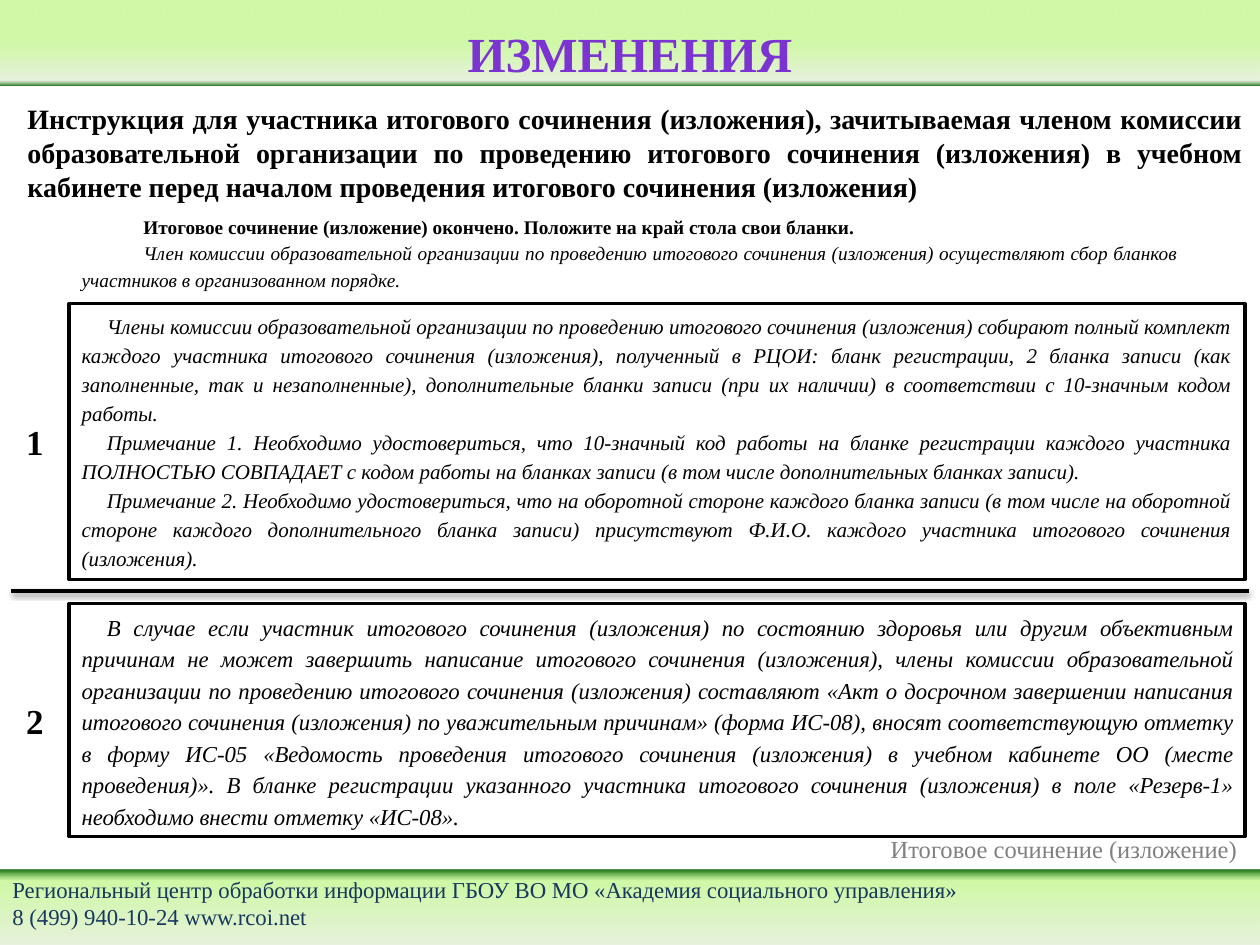
from dataclasses import dataclass
from typing import Optional

from lxml import etree
from pptx import Presentation
from pptx.dml.color import RGBColor
from pptx.enum.shapes import MSO_CONNECTOR as Connector, MSO_SHAPE as Shape
from pptx.enum.text import MSO_ANCHOR as Anchor, PP_ALIGN as Align
from pptx.oxml import parse_xml
from pptx.oxml.ns import nsdecls, qn
from pptx.util import Inches, Pt

FONT = "Times New Roman"
BLACK = RGBColor(0x00, 0x00, 0x00)
WHITE = RGBColor(0xFF, 0xFF, 0xFF)
PURPLE = RGBColor(0x7B, 0x34, 0xD2)
NAVY = RGBColor(0x17, 0x37, 0x5E)
GRAY = RGBColor(0x80, 0x80, 0x80)
PALE = RGBColor(0xDD, 0xEB, 0xCF)
LIME = RGBColor(0xB4, 0xF5, 0x73)
GREEN = RGBColor(0x15, 0x6B, 0x13)


@dataclass
class Stop:
    position: int
    color: RGBColor
    opacity: int = 100


@dataclass
class Band:
    top: float
    height: float
    angle: int
    stops: list[Stop]


@dataclass
class Span:
    text: str
    bold: bool = False
    italic: bool = False


@dataclass
class Panel:
    left: float
    top: float
    width: float
    height: float
    size: int
    paras: list[Span]
    indent: float = 0
    spacing: Optional[float] = None
    border: bool = False


@dataclass
class Label:
    left: float
    top: float
    width: float
    height: float
    text: str
    size: int
    color: RGBColor
    bold: bool = False


BANDS = [
    Band(6.9, 0.6, 270, [Stop(0, PALE, 68), Stop(85, LIME, 63), Stop(100, GREEN)]),
    Band(0, 0.68, 90, [Stop(50, LIME, 63), Stop(93, PALE, 68), Stop(100, GREEN)]),
]
LABELS = [
    Label(0, 6.9, 8.61, 0.55,
          "Региональный центр обработки информации ГБОУ ВО МО «Академия социального управления»"
          "\v8 (499) 940-10-24 www.rcoi.net", 13, NAVY),
    Label(6.97, 6.57, 2.99, 0.34, "Итоговое сочинение (изложение)", 14, GRAY),
    Label(0.11, 3.29, 0.31, 0.44, "1", 20, BLACK, True),
    Label(0.11, 5.5, 0.31, 0.44, "2", 20, BLACK, True),
]
PANELS = [
    Panel(0.12, 0.76, 9.84, 0.91, 16, [Span(
        "Инструкция для участника итогового сочинения (изложения), зачитываемая членом комиссии "
        "образовательной организации по проведению итогового сочинения (изложения) в учебном "
        "кабинете перед началом проведения итогового сочинения (изложения)", bold=True)]),
    Panel(0.55, 4.79, 9.33, 1.85, 13, [Span(
        "В случае если участник итогового сочинения (изложения) по состоянию здоровья или другим "
        "объективным причинам не может завершить написание итогового сочинения (изложения), члены "
        "комиссии образовательной организации по проведению итогового сочинения (изложения) "
        "составляют «Акт о досрочном завершении написания итогового сочинения (изложения) по "
        "уважительным причинам» (форма ИС-08), вносят соответствующую отметку в форму ИС-05 "
        "«Ведомость проведения итогового сочинения (изложения) в учебном кабинете ОО (месте "
        "проведения)». В бланке регистрации указанного участника итогового сочинения (изложения) "
        "в поле «Резерв-1» необходимо внести отметку «ИС-08».", italic=True)],
        0.2, 1.15, True),
    Panel(0.55, 2.41, 9.33, 2.19, 12, [
        Span("Члены комиссии образовательной организации по проведению итогового сочинения "
             "(изложения) собирают полный комплект каждого участника итогового сочинения "
             "(изложения), полученный в РЦОИ: бланк регистрации, 2 бланка записи (как заполненные, "
             "так и незаполненные), дополнительные бланки записи (при их наличии) в соответствии "
             "с 10-значным кодом работы.", italic=True),
        Span("Примечание 1. Необходимо удостовериться, что 10-значный код работы на бланке "
             "регистрации каждого участника ПОЛНОСТЬЮ СОВПАДАЕТ с кодом работы на бланках записи "
             "(в том числе дополнительных бланках записи).", italic=True),
        Span("Примечание 2. Необходимо удостовериться, что на оборотной стороне каждого бланка "
             "записи (в том числе на оборотной стороне каждого дополнительного бланка записи) "
             "присутствуют Ф.И.О. каждого участника итогового сочинения (изложения).", italic=True),
    ], 0.2, 1.15, True),
    Panel(0.55, 1.63, 8.9, 0.74, 11, [
        Span("Итоговое сочинение (изложение) окончено. Положите на край стола свои бланки.",
             bold=True),
        Span("Член комиссии образовательной организации по проведению итогового сочинения "
             "(изложения) осуществляют сбор бланков участников в организованном порядке.",
             italic=True),
    ], 0.49, 1.15),
]


def set_font(para, size: int, color: RGBColor, bold: bool = False, italic: bool = False) -> None:
    font = para.font
    font.name, font.size, font.bold, font.italic = FONT, Pt(size), bold, italic
    font.color.rgb = color


def add_rectangle(page, left: float, top: float, width: float, height: float):
    box = page.shapes.add_shape(Shape.RECTANGLE, Inches(left), Inches(top),
                                Inches(width), Inches(height))
    box.shadow.inherit = False
    box.line.fill.background()
    return box


def draw_band(page, band: Band) -> None:
    box = add_rectangle(page, 0, band.top, 10, band.height)
    stops = "".join(
        f'<a:gs pos="{stop.position * 1000}"><a:srgbClr val="{stop.color}">'
        f'<a:alpha val="{stop.opacity * 1000}"/></a:srgbClr></a:gs>' for stop in band.stops)
    gradient = parse_xml(f'<a:gradFill {nsdecls("a")} rotWithShape="1"><a:gsLst>{stops}</a:gsLst>'
                         f'<a:lin ang="{band.angle * 60000}" scaled="0"/></a:gradFill>')
    box._element.spPr.find(qn("a:prstGeom")).addnext(gradient)


def draw_label(page, label: Label) -> None:
    box = page.shapes.add_textbox(Inches(label.left), Inches(label.top),
                                  Inches(label.width), Inches(label.height))
    box.text_frame.word_wrap = True
    para = box.text_frame.paragraphs[0]
    para.text = label.text
    set_font(para, label.size, label.color, label.bold)


def draw_panel(page, panel: Panel) -> None:
    box = add_rectangle(page, panel.left, panel.top, panel.width, panel.height)
    box.fill.solid()
    box.fill.fore_color.rgb = WHITE
    if panel.border:
        box.line.color.rgb = BLACK
        box.line.width = Pt(2)
    frame = box.text_frame
    frame.word_wrap = True
    frame.vertical_anchor = Anchor.TOP
    for number, span in enumerate(panel.paras):
        para = frame.add_paragraph() if number else frame.paragraphs[0]
        para.text = span.text
        para.alignment = Align.JUSTIFY
        para.line_spacing = panel.spacing
        para._p.get_or_add_pPr().set("indent", str(Inches(panel.indent)))
        set_font(para, panel.size, BLACK, span.bold, span.italic)


def draw_divider(page) -> None:
    line = page.shapes.add_connector(Connector.STRAIGHT, Inches(0.09), Inches(4.69),
                                     Inches(9.91), Inches(4.69))
    line.line.color.rgb = BLACK
    line.line.width = Pt(2)
    effects = etree.SubElement(line._element.spPr, qn("a:effectLst"))
    shadow = etree.SubElement(effects, qn("a:outerShdw"), blurRad=str(Pt(3.1)),
                              dist=str(Pt(1.6)), dir="5400000", rotWithShape="0")
    color = etree.SubElement(shadow, qn("a:srgbClr"), val=str(BLACK))
    etree.SubElement(color, qn("a:alpha"), val="38000")


def place_title(page) -> None:
    title = page.shapes.title
    title.left, title.top, title.width, title.height = 0, 0, Inches(10), Inches(0.6)
    title.text_frame.vertical_anchor = Anchor.MIDDLE
    para = title.text_frame.paragraphs[0]
    para.text = "ИЗМЕНЕНИЯ"
    para.alignment = Align.CENTER
    para.line_spacing = 1.5
    set_font(para, 28, PURPLE, bold=True)
    page.shapes._spTree.append(title._element)  # in front of the bands


def main() -> None:
    deck = Presentation()
    deck.slide_width, deck.slide_height = Inches(10), Inches(7.5)
    page = deck.slides.add_slide(deck.slide_layouts[5])
    for band in BANDS:
        draw_band(page, band)
    place_title(page)
    for panel in PANELS:
        draw_panel(page, panel)
    for label in LABELS:
        draw_label(page, label)
    draw_divider(page)
    deck.save("out.pptx")


if __name__ == "__main__":
    main()
